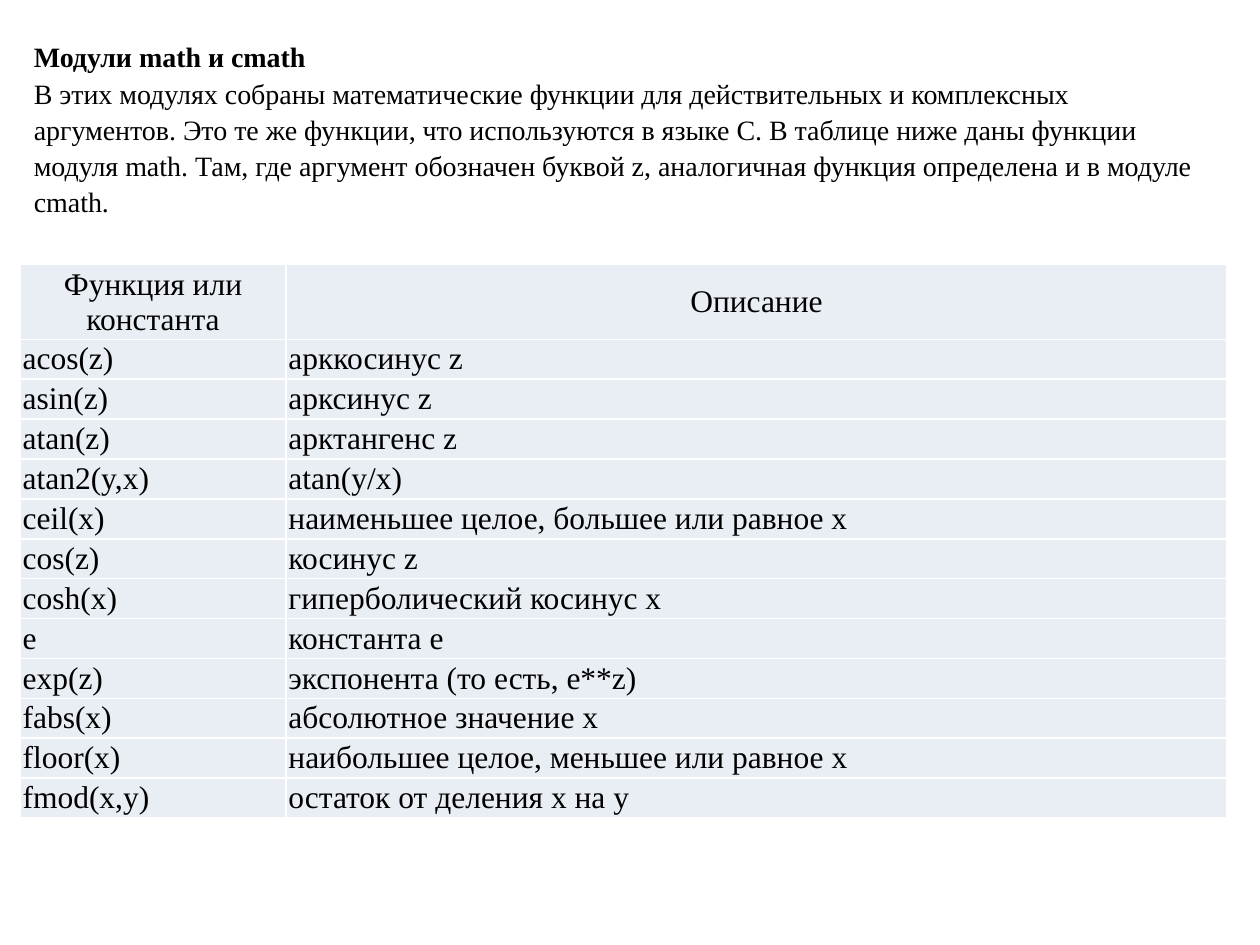
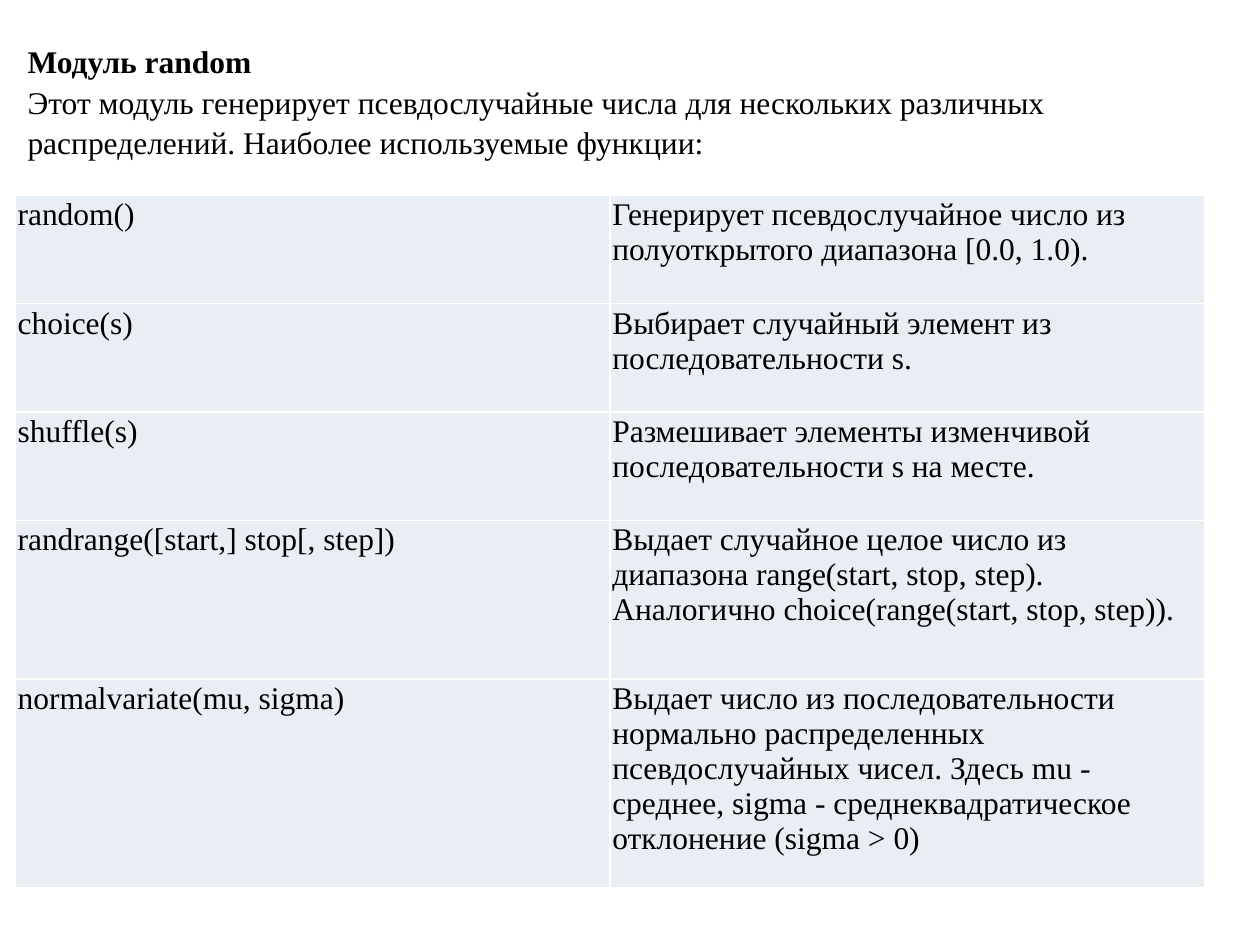
import dataclasses

import lxml.etree
import pptx
import pptx.dml.color
import pptx.enum.text
import pptx.oxml.ns
import pptx.util

Inches = pptx.util.Inches
Align = pptx.enum.text.PP_ALIGN
Anchor = pptx.enum.text.MSO_ANCHOR


@dataclasses.dataclass(frozen=True)
class Theme:
    font: str = "Times New Roman"
    ink: str = "000000"
    cell_fill: str = "E9EDF4"
    border: str = "FFFFFF"
    border_width: float = 1
    body_size: int = 18
    compact_size: int = 16
    intro_spacing: float = 1.08
    cell_margin: float = 0.02


class SlideBuilder:
    def __init__(self, deck, theme):
        self.deck = deck
        self.theme = theme
        self.page = None

    def new_page(self):
        self.page = self.deck.slides.add_slide(self.deck.slide_layouts[6])

    def style(self, para, size, bold=False, align=Align.LEFT):
        para.alignment = align
        para.font.name = self.theme.font
        para.font.size = pptx.util.Pt(size)
        para.font.bold = bold
        para.font.color.rgb = pptx.dml.color.RGBColor.from_string(self.theme.ink)

    def intro(self, left, top, width, height, title, body, size):
        box = self.page.shapes.add_textbox(
            Inches(left), Inches(top), Inches(width), Inches(height))
        frame = box.text_frame
        frame.word_wrap = True
        frame.vertical_anchor = Anchor.MIDDLE
        frame.margin_bottom = 0
        frame.text = f"{title}\n{body}"
        for index, para in enumerate(frame.paragraphs):
            self.style(para, size, bold=index == 0)
            para.line_spacing = self.theme.intro_spacing

    def table(self, left, top, widths, heights, rows, header=False):
        table = self.page.shapes.add_table(
            len(rows), len(widths), Inches(left), Inches(top),
            Inches(sum(widths)), Inches(sum(heights))).table
        table.first_row = False
        table.horz_banding = False
        for column, width in zip(table.columns, widths):
            column.width = Inches(width)
        for index, (row, height, texts) in enumerate(zip(table.rows, heights, rows)):
            row.height = Inches(height)
            for cell, text in zip(row.cells, texts):
                self.cell(cell, text, header and index == 0)

    def cell(self, cell, text, is_header):
        margin = Inches(self.theme.cell_margin)
        cell.margin_left = cell.margin_right = margin
        cell.margin_top = cell.margin_bottom = margin
        cell.vertical_anchor = Anchor.MIDDLE if is_header else Anchor.TOP
        cell.text = text
        self.style(cell.text_frame.paragraphs[0], self.theme.body_size,
                   align=Align.CENTER if is_header else Align.LEFT)
        cell.fill.solid()
        cell.fill.fore_color.rgb = pptx.dml.color.RGBColor.from_string(
            self.theme.cell_fill)
        self.borders(cell)

    def borders(self, cell):
        qn = pptx.oxml.ns.qn
        properties = cell._tc.get_or_add_tcPr()
        for position, side in enumerate(("lnL", "lnR", "lnT", "lnB")):
            line = lxml.etree.Element(
                qn(f"a:{side}"), w=str(pptx.util.Pt(self.theme.border_width)))
            fill = lxml.etree.SubElement(line, qn("a:solidFill"))
            lxml.etree.SubElement(fill, qn("a:srgbClr"), val=self.theme.border)
            properties.insert(position, line)


MATH_ROWS = [
    ("Функция или константа", "Описание"),
    ("acos(z)", "арккосинус z"),
    ("asin(z)", "арксинус z"),
    ("atan(z)", "арктангенс z"),
    ("atan2(y,x)", "atan(y/x)"),
    ("ceil(x)", "наименьшее целое, большее или равное x"),
    ("cos(z)", "косинус z"),
    ("cosh(x)", "гиперболический косинус x"),
    ("e", "константа e"),
    ("exp(z)", "экспонента (то есть, e**z)"),
    ("fabs(x)", "абсолютное значение x"),
    ("floor(x)", "наибольшее целое, меньшее или равное x"),
    ("fmod(x,y)", "остаток от деления x на y"),
]

RANDOM_ROWS = [
    ("random()",
     "Генерирует псевдослучайное число из полуоткрытого диапазона [0.0, 1.0)."),
    ("choice(s)", "Выбирает случайный элемент из последовательности s."),
    ("shuffle(s)",
     "Размешивает элементы изменчивой последовательности s на месте."),
    ("randrange([start,] stop[, step])",
     "Выдает случайное целое число из диапазона range(start, stop, step). "
     "Аналогично choice(range(start, stop, step))."),
    ("normalvariate(mu, sigma)",
     "Выдает число из последовательности нормально распределенных "
     "псевдослучайных чисел. Здесь mu - среднее, sigma - "
     "среднеквадратическое отклонение (sigma > 0)"),
]


def build_math(builder):
    builder.new_page()
    heights = [0.58] + [0.31] * (len(MATH_ROWS) - 1)
    builder.table(0.16, 2.1, [2.11, 7.47], heights, MATH_ROWS, header=True)
    builder.intro(
        0.17, 0.29, 9.59, 1.4, "Модули math и cmath",
        "В этих модулях собраны математические функции для действительных и "
        "комплексных аргументов. Это те же функции, что используются в языке C. "
        "В таблице ниже даны функции модуля math. Там, где аргумент обозначен "
        "буквой z, аналогичная функция определена и в модуле cmath.",
        builder.theme.compact_size)


def build_random(builder):
    builder.new_page()
    heights = [0.86] * 3 + [1.26, 1.66]
    builder.table(0.12, 1.55, [4.72, 4.72], heights, RANDOM_ROWS)
    builder.intro(
        0.12, 0.29, 9.61, 0.96, "Модуль random",
        "Этот модуль генерирует псевдослучайные числа для нескольких различных "
        "распределений. Наиболее используемые функции:",
        builder.theme.body_size)


def main():
    deck = pptx.Presentation()
    deck.slide_width = Inches(10)
    deck.slide_height = Inches(7.5)
    builder = SlideBuilder(deck, Theme())
    build_math(builder)
    build_random(builder)
    deck.save("out.pptx")


if __name__ == "__main__":
    main()
